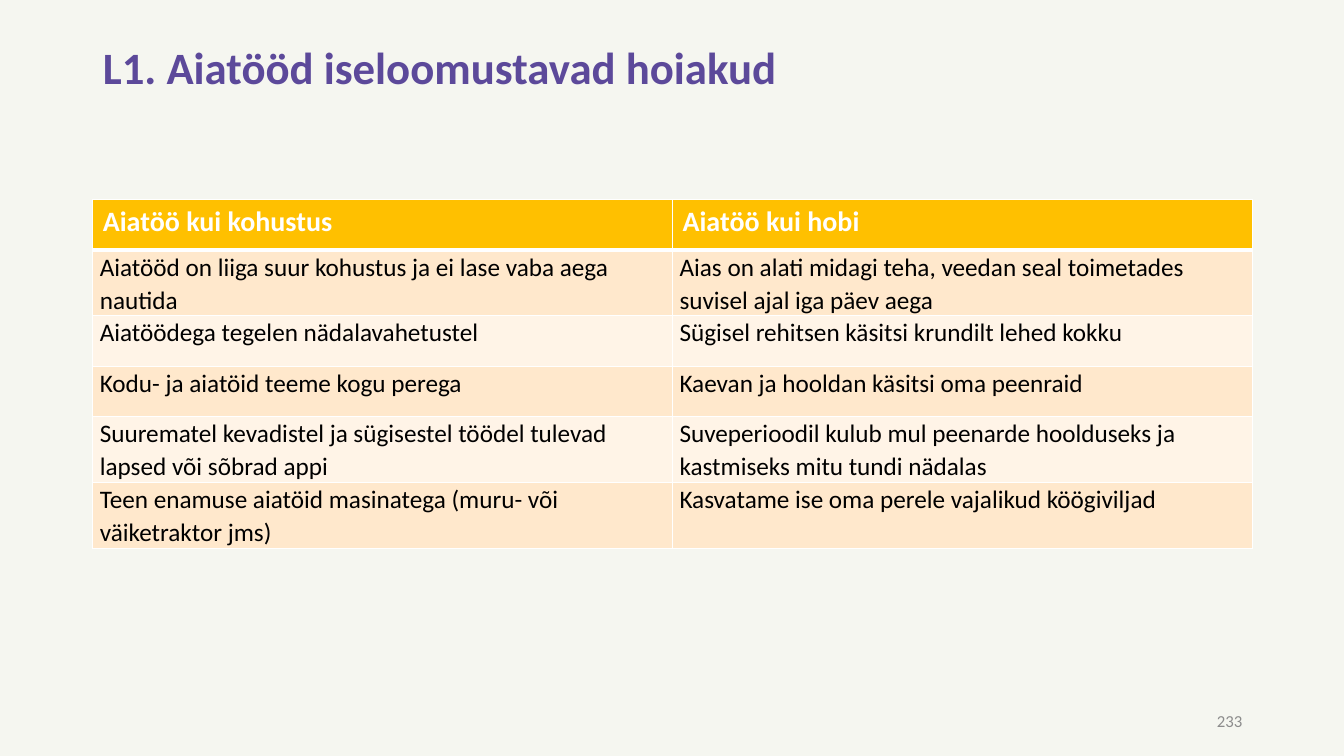
import pptx
import pptx.dml.color
import pptx.enum.text
import pptx.oxml
import pptx.oxml.ns
import pptx.util
from pptx.util import Inches

COLORS = {
    "background": "F5F6F0",
    "title": "5C499A",
    "number": "8C8C8C",
    "header": "FFC000",
    "odd_row": "FFE8CC",
    "even_row": "FFF4E7",
    "white": "FFFFFF",
    "black": "000000",
}
ATTITUDES = [
    ("Aiatöö kui kohustus", "Aiatöö kui hobi"),
    ("Aiatööd on liiga suur kohustus ja ei lase vaba aega nautida",
     "Aias on alati midagi teha, veedan seal toimetades suvisel ajal iga päev aega"),
    ("Aiatöödega tegelen nädalavahetustel",
     "Sügisel rehitsen käsitsi krundilt lehed kokku"),
    ("Kodu- ja aiatöid teeme kogu perega",
     "Kaevan ja hooldan käsitsi oma peenraid"),
    ("Suurematel kevadistel ja sügisestel töödel tulevad lapsed või sõbrad appi",
     "Suveperioodil kulub mul peenarde hoolduseks ja kastmiseks mitu tundi nädalas"),
    ("Teen enamuse aiatöid masinatega (muru- või väiketraktor jms)",
     "Kasvatame ise oma perele vajalikud köögiviljad"),
]


def rgb(name):
    """Return the named colour."""
    return pptx.dml.color.RGBColor.from_string(COLORS[name])


def write(frame, text, size, color, bold=False, align="LEFT", spacing=1.0, after=0):
    """Write one formatted paragraph into a text frame."""
    frame.word_wrap = True
    paragraph = frame.paragraphs[0]
    paragraph.alignment = getattr(pptx.enum.text.PP_ALIGN, align)
    paragraph.line_spacing = spacing
    paragraph.space_after = pptx.util.Pt(after)
    run = paragraph.add_run()
    run.text = text
    run.font.name = "Calibri"
    run.font.size = pptx.util.Pt(size)
    run.font.bold = bold
    run.font.color.rgb = rgb(color)


def add_borders(cell, top, bottom):
    """Draw white borders around a cell, with widths in points."""
    properties = cell._tc.get_or_add_tcPr()
    for side, width in (("L", 1), ("R", 1), ("T", top), ("B", bottom)):
        properties.append(pptx.oxml.parse_xml(
            f'<a:ln{side} {pptx.oxml.ns.nsdecls("a")} w="{pptx.util.Pt(width)}">'
            f'<a:solidFill><a:srgbClr val="{COLORS["white"]}"/></a:solidFill>'
            f'</a:ln{side}>'))


def place_title(slide, left, top, width, height):
    """Place the slide title in its box."""
    title = slide.shapes.title
    title.left, title.top, title.width, title.height = left, top, width, height
    frame = title.text_frame
    frame.auto_size = pptx.enum.text.MSO_AUTO_SIZE.NONE
    frame.vertical_anchor = pptx.enum.text.MSO_ANCHOR.TOP
    write(frame, "L1. Aiatööd iseloomustavad hoiakud", 32, "title", bold=True, spacing=0.9)


def place_attitudes(slide, left, top, width, height):
    """Place the two-column table of attitudes in its box."""
    table = slide.shapes.add_table(
        len(ATTITUDES), len(ATTITUDES[0]), left, top, width, height).table
    for row, statements in enumerate(ATTITUDES):
        for column, statement in enumerate(statements):
            cell = table.cell(row, column)
            add_borders(cell, top=3 if row == 1 else 1, bottom=3 if row == 0 else 1)
            cell.fill.solid()
            if row == 0:
                cell.fill.fore_color.rgb = rgb("header")
                write(cell.text_frame, statement, 20, "white", bold=True)
            else:
                cell.fill.fore_color.rgb = rgb("odd_row" if row % 2 else "even_row")
                cell.margin_left = cell.margin_right = Inches(0.07)
                cell.margin_top = cell.margin_bottom = 0
                write(cell.text_frame, statement, 18, "black", spacing=1.07, after=8)


def place_number(slide, left, top, width, height):
    """Place the slide number in its box."""
    frame = slide.shapes.add_textbox(left, top, width, height).text_frame
    frame.vertical_anchor = pptx.enum.text.MSO_ANCHOR.MIDDLE
    write(frame, "233", 12, "number", align="RIGHT")


def main():
    """Build and save the slide."""
    deck = pptx.Presentation()
    deck.slide_width, deck.slide_height = Inches(13.33), Inches(7.5)
    slide = deck.slides.add_slide(deck.slide_layouts[5])
    slide.background.fill.solid()
    slide.background.fill.fore_color.rgb = rgb("background")
    left, width = Inches(0.92), Inches(11.5)
    place_title(slide, left, Inches(0.4), width, Inches(1.45))
    place_attitudes(slide, left, Inches(1.98), width, Inches(3))
    place_number(slide, Inches(9.42), Inches(6.95), Inches(3), Inches(0.4))
    deck.save("out.pptx")


if __name__ == "__main__":
    main()
